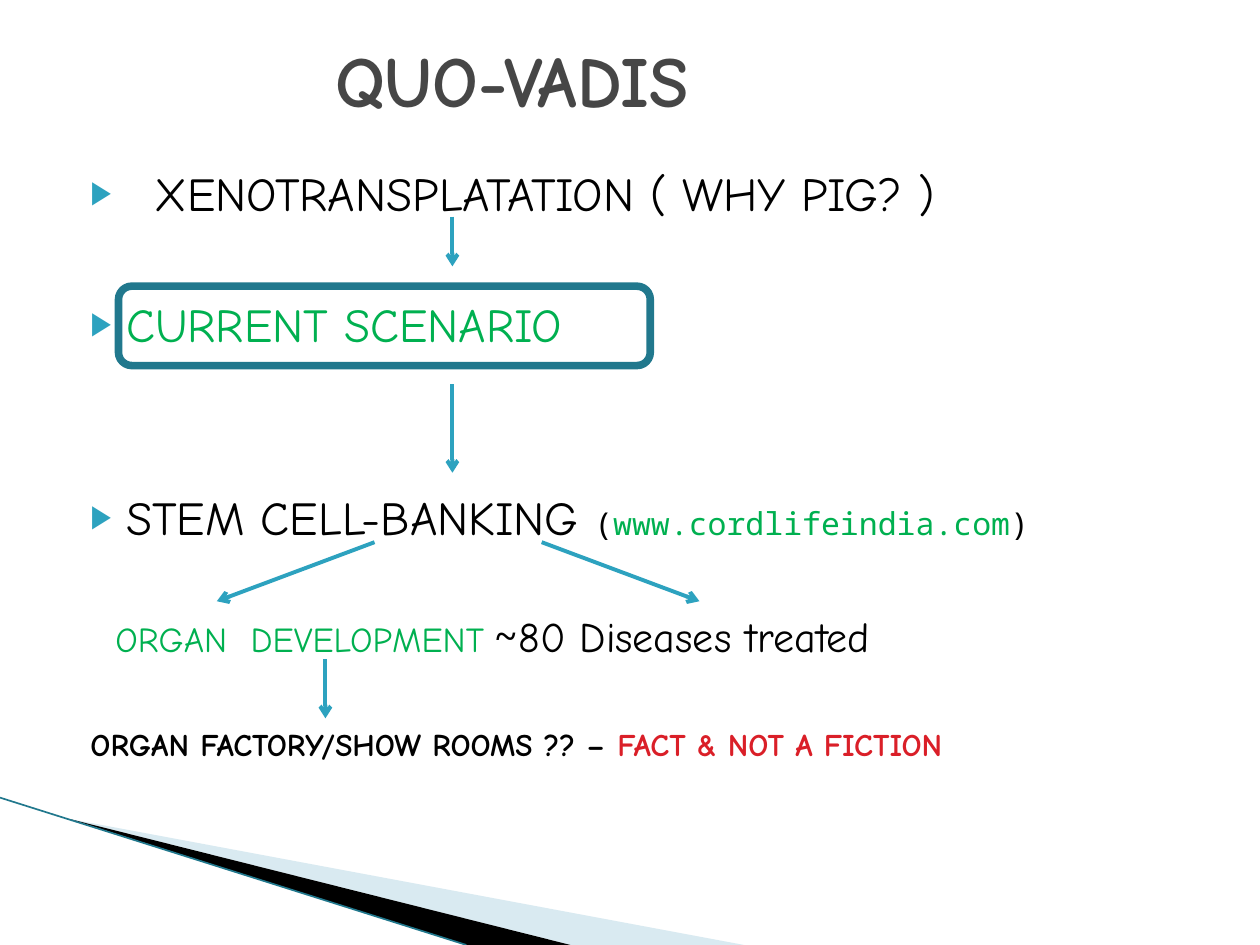
from lxml import etree
from pptx import Presentation
from pptx.dml.color import RGBColor
from pptx.enum.shapes import MSO_CONNECTOR, MSO_SHAPE
from pptx.enum.text import MSO_ANCHOR, MSO_AUTO_SIZE, PP_ALIGN
from pptx.oxml.ns import qn
from pptx.util import Cm, Pt

LINE = MSO_CONNECTOR.STRAIGHT
ROUND = MSO_SHAPE.ROUNDED_RECTANGLE
MIDDLE, TOP = MSO_ANCHOR.MIDDLE, MSO_ANCHOR.TOP
LEFT, NO_FIT = PP_ALIGN.LEFT, MSO_AUTO_SIZE.NONE

COMIC, MONO = "Comic Neue", "Noto Sans Mono"
BLACK, GREEN, RED, GREY = "000000", "00B050", "DA1F28", "464646"
TEAL, DARK, PALE = "2DA2BF", "21788D", "A0CBDC"


def color(code):
    return RGBColor.from_string(code)


def child(parent, tag, **attrs):
    node = etree.SubElement(parent, qn(tag))
    for name, value in attrs.items():
        node.set(name, str(value))
    return node


def add_text(para, text, size=27, font=COMIC, fill=BLACK, bold=False):
    run = para.add_run()
    run.text = text
    run.font.size, run.font.name, run.font.bold = Pt(size), font, bold
    run.font.color.rgb = color(fill)


def set_para(para, gap, left, hang=0, bullet=False, tab=None):
    """Set gap in points; left, hang and tab in centimetres."""
    para.alignment, para.line_spacing = LEFT, 1.0
    para.space_before, para.space_after = Pt(gap), Pt(0)
    props = para._p.get_or_add_pPr()
    props.set("marL", str(Cm(left)))
    props.set("indent", str(-Cm(hang)))
    if bullet:
        child(child(props, "a:buClr"), "a:srgbClr", val=TEAL)
        child(props, "a:buSzPct", val=68000)
        child(props, "a:buChar", char="▶")
    else:
        child(props, "a:buNone")
    if tab:
        child(child(props, "a:tabLst"), "a:tab", pos=Cm(tab), algn="l")


def place(shape, box, anchor):
    shape.left, shape.top, shape.width, shape.height = map(Cm, box)
    frame = shape.text_frame
    frame.word_wrap, frame.auto_size = True, NO_FIT
    frame.vertical_anchor = anchor
    return frame


def add_line(slide, start, end, fill=TEAL, width=2.25, arrow=True):
    line = slide.shapes.add_connector(LINE, *map(Cm, start + end))
    line.line.color.rgb, line.line.width = color(fill), Pt(width)
    if arrow:
        child(line.line._get_or_add_ln(), "a:tailEnd", type="arrow")
    child(line._element.spPr, "a:effectLst")


def add_wedge(slide, points, fill, alpha=100):
    first, *rest = [(Cm(x), Cm(y)) for x, y in points]
    build = slide.shapes.build_freeform(*first)
    build.add_line_segments(rest)
    wedge = build.convert_to_shape()
    wedge.shadow.inherit = False
    wedge.fill.solid()
    wedge.fill.fore_color.rgb = color(fill)
    wedge.line.fill.background()
    if alpha < 100:
        tint = wedge._element.spPr.find(".//" + qn("a:srgbClr"))
        child(tint, "a:alpha", val=alpha * 1000)


def add_corner(slide, box):
    left, top, width, height = box
    base = top + height
    tip = (left + 1.4, top + 0.43)
    add_wedge(slide, [tip, (left + 15, base), (left + 11.5, base)], PALE, 40)
    add_wedge(slide, [tip, (left + 11.5, base), (left + 9.4, base)], BLACK)
    add_line(slide, (left, top), (left + width, base), DARK, 0.95, False)


def add_title(slide, box):
    para = place(slide.shapes.title, box, MIDDLE).paragraphs[0]
    para.alignment = LEFT
    add_text(para, "QUO-VADIS", size=41, fill=GREY, bold=True)


def add_list(slide, box):
    rows = [
        (dict(gap=0, left=1.6, hang=1.3, bullet=True),
         [("XENOTRANSPLATATION ( WHY PIG? )", {})]),
        (dict(gap=42.7, left=1.02, hang=0.72, bullet=True),
         [("CURRENT SCENARIO", dict(fill=GREEN))]),
        (dict(gap=77.5, left=1.02, hang=0.72, bullet=True),
         [("STEM CELL-BANKING ", {}),
          ("(", dict(size=18, font=MONO)),
          ("www.cordlifeindia.com", dict(size=18, font=MONO, fill=GREEN)),
          (")", dict(size=18, font=MONO))]),
        (dict(gap=37.7, left=0.8, tab=10.64),
         [("ORGAN  DEVELOPMENT\t", dict(size=20, fill=GREEN)),
          ("~", dict(size=24, font=MONO)),
          ("80 Diseases treated", dict(size=24))]),
        (dict(gap=36.6, left=0.3),
         [("ORGAN FACTORY/SHOW ROOMS ?? – ", dict(size=18, bold=True)),
          ("FACT & NOT A FICTION", dict(size=18, bold=True, fill=RED))]),
    ]
    frame = place(slide.placeholders[1], box, TOP)
    for i, (layout, runs) in enumerate(rows):
        para = frame.add_paragraph() if i else frame.paragraphs[0]
        set_para(para, **layout)
        for text, style in runs:
            add_text(para, text, **style)


def add_flow(slide, box):
    """Frame the current step and join the steps with arrows."""
    left, top, width, height = box
    step = slide.shapes.add_shape(ROUND, *map(Cm, box))
    step.shadow.inherit = False
    step.fill.background()
    step.line.color.rgb, step.line.width = color(DARK), Pt(4.33)
    mid = left + 6.73
    arrows = [
        (mid, -1.4, mid, -0.4),
        (mid, 1.98, mid, 3.76),
        (left + 5.16, 5.16, left + 1.98, 6.35),
        (left + 8.53, 5.16, left + 11.71, 6.35),
        (left + 4.17, 7.52, left + 4.17, 8.71),
    ]
    for x1, y1, x2, y2 in arrows:
        add_line(slide, (x1, top + y1), (x2, top + y2))


def main():
    deck = Presentation()
    deck.slide_width, deck.slide_height = Cm(25.4), Cm(19.05)
    slide = deck.slides.add_slide(deck.slide_layouts[1])
    add_corner(slide, (0, 16.08, 9.4, 2.97))
    add_list(slide, (1.27, 3.18, 22.86, 13.69))
    add_title(slide, (6.5, 0, 22.86, 3.18))
    add_flow(slide, (2.39, 5.77, 10.72, 1.6))
    deck.save("out.pptx")


if __name__ == "__main__":
    main()
